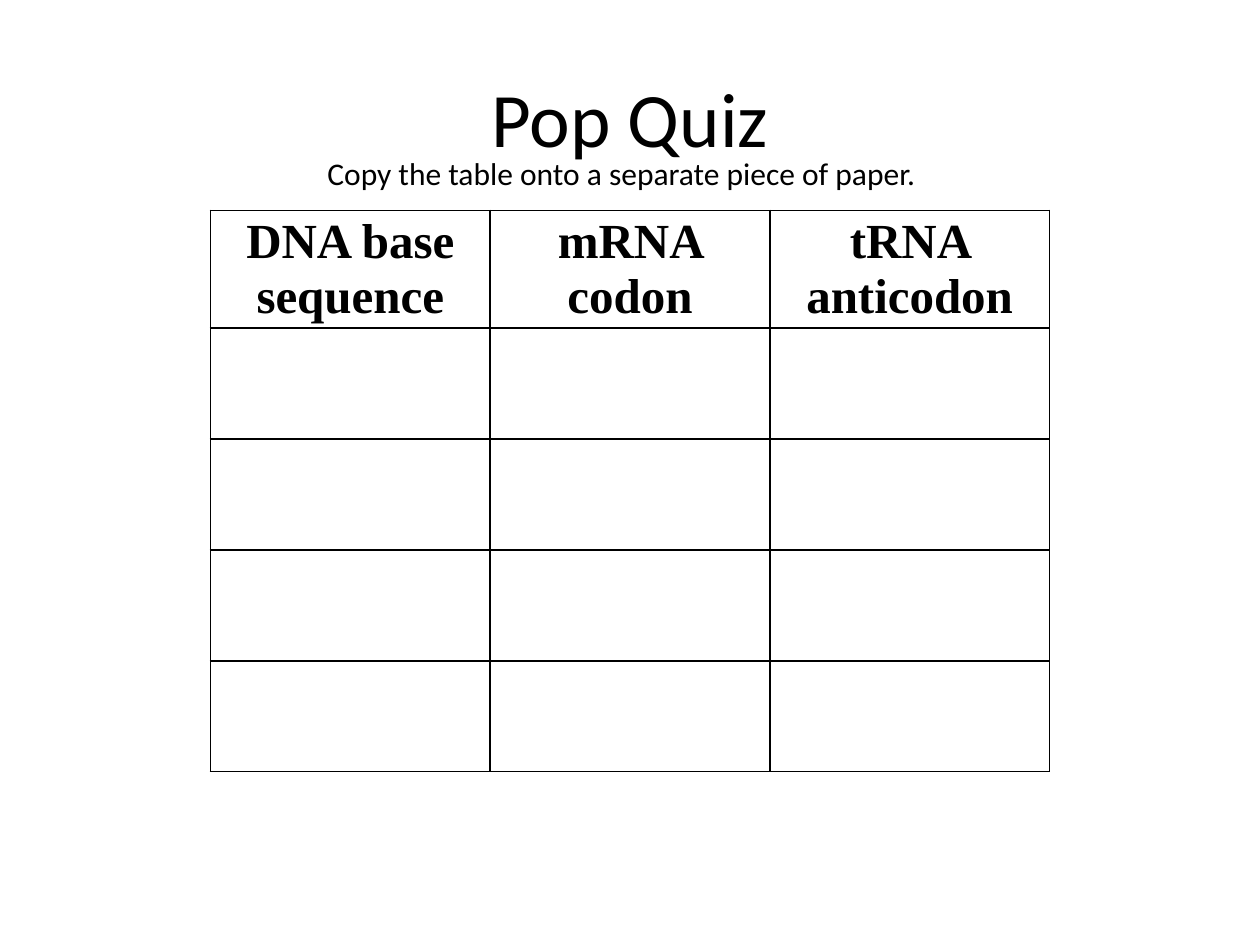
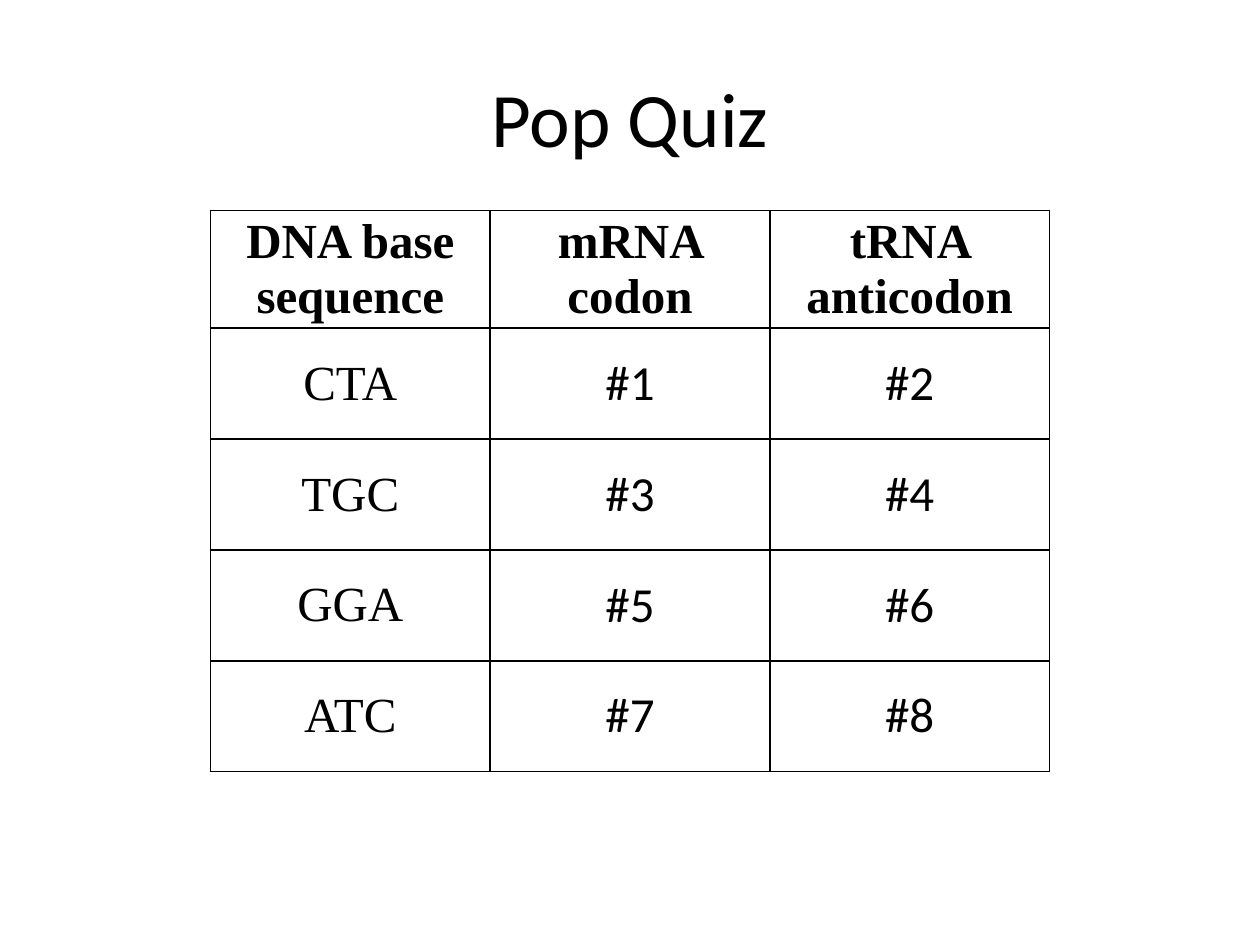
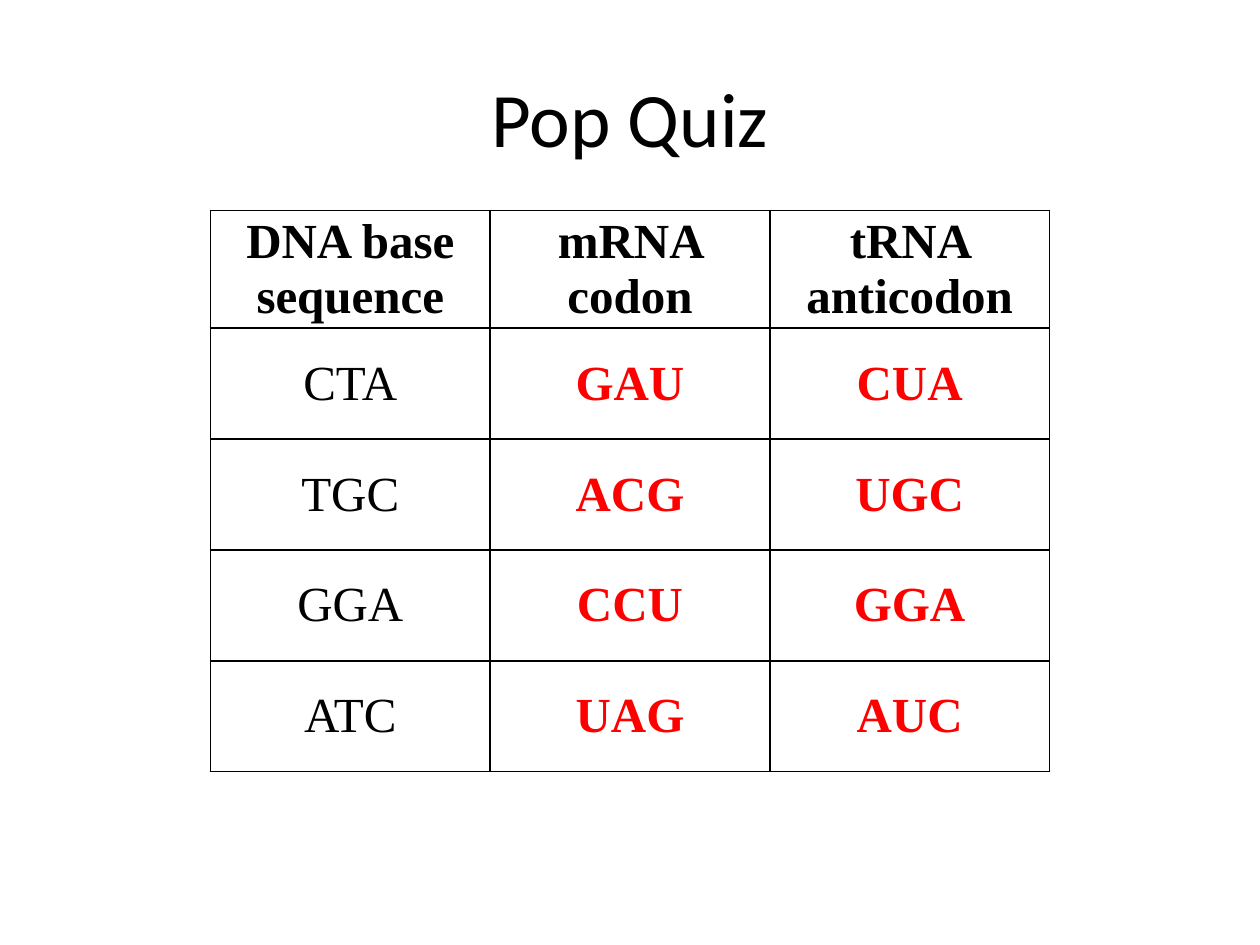
from pptx import Presentation
from pptx.dml.color import RGBColor
from pptx.enum.text import MSO_ANCHOR as Anchor, PP_ALIGN as Align
from pptx.oxml.ns import qn
from pptx.util import Inches, Pt
from lxml.etree import SubElement

BLACK = RGBColor(0x00, 0x00, 0x00)
RED = RGBColor(0xFF, 0x00, 0x00)
SANS = "Calibri"
SERIF = "Times New Roman"

HEADINGS = ["DNA base sequence", "mRNA codon", "tRNA anticodon"]
DNA = ["CTA", "TGC", "GGA", "ATC"]
ANSWERS = [("GAU", "CUA"), ("ACG", "UGC"), ("CCU", "GGA"), ("UAG", "AUC")]
NUMBERS = [(f"#{n}", f"#{n + 1}") for n in range(1, 2 * len(DNA), 2)]
BLANKS = [("", "", "")] * len(DNA)
COLUMN_WIDTH = 2.22
ROW_HEIGHT = 0.88


def style(paragraph, size, face=SANS, color=BLACK, bold=False, align=Align.CENTER):
    """Set the font and alignment of a paragraph."""
    paragraph.alignment = align
    font = paragraph.font
    font.size, font.name, font.bold = Pt(size), face, bold
    font.color.rgb = color


def add_text(slide, text, box, size, anchor=Anchor.TOP, align=Align.CENTER, wrap=True):
    """Add a text box with one paragraph."""
    frame = slide.shapes.add_textbox(*map(Inches, box)).text_frame
    frame.word_wrap = wrap
    frame.vertical_anchor = anchor
    frame.text = text
    style(frame.paragraphs[0], size, align=align)


def add_borders(cell):
    """Draw a thin black line on each side of a cell."""
    properties = cell._tc.get_or_add_tcPr()
    for side in ("a:lnL", "a:lnR", "a:lnT", "a:lnB"):
        line = SubElement(properties, qn(side), w=str(Pt(1)))
        fill = SubElement(line, qn("a:solidFill"))
        SubElement(fill, qn("a:srgbClr"), val=str(BLACK))


def fill_cell(cell, text, **look):
    """Write centred text in a bordered cell without fill."""
    add_borders(cell)
    cell.fill.background()
    cell.vertical_anchor = Anchor.MIDDLE
    cell.margin_left = cell.margin_right = Inches(0.07)
    cell.margin_top = cell.margin_bottom = 0
    cell.text = text
    style(cell.text_frame.paragraphs[0], 28, **look)


def add_codon_table(slide, rows, answer_look):
    """Add the headings and the rows of the codon table."""
    row_count, column_count = len(rows) + 1, len(HEADINGS)
    table = slide.shapes.add_table(
        row_count, column_count, Inches(1.67), Inches(1.67),
        Inches(COLUMN_WIDTH * column_count), Inches(ROW_HEIGHT * row_count)).table
    table.first_row = table.horz_banding = False
    for column, heading in enumerate(HEADINGS):
        fill_cell(table.cell(0, column), heading, face=SERIF, bold=True)
    for row, texts in enumerate(rows, 1):
        for column, text in enumerate(texts):
            look = answer_look if column else {"face": SERIF}
            fill_cell(table.cell(row, column), text, **look)


def add_quiz_slide(deck, rows, **answer_look):
    """Add a slide with the quiz title and its codon table."""
    slide = deck.slides.add_slide(deck.slide_layouts[6])
    add_text(slide, "Pop Quiz", (0.5, 0.3, 9, 1.25), 44, Anchor.MIDDLE)
    add_codon_table(slide, rows, answer_look)
    return slide


def main():
    """Build the quiz: empty table, questions and answers."""
    deck = Presentation()
    deck.slide_width, deck.slide_height = Inches(10), Inches(7.5)
    copying = add_quiz_slide(deck, BLANKS)
    add_text(copying, "Copy the table onto a separate piece of paper.",
             (2.5, 1.17, 4.89, 0.4), 18, align=Align.LEFT, wrap=False)
    add_quiz_slide(deck, [(dna, *pair) for dna, pair in zip(DNA, NUMBERS)])
    add_quiz_slide(deck, [(dna, *pair) for dna, pair in zip(DNA, ANSWERS)],
                   face=SERIF, color=RED, bold=True)
    deck.save("out.pptx")


if __name__ == "__main__":
    main()
